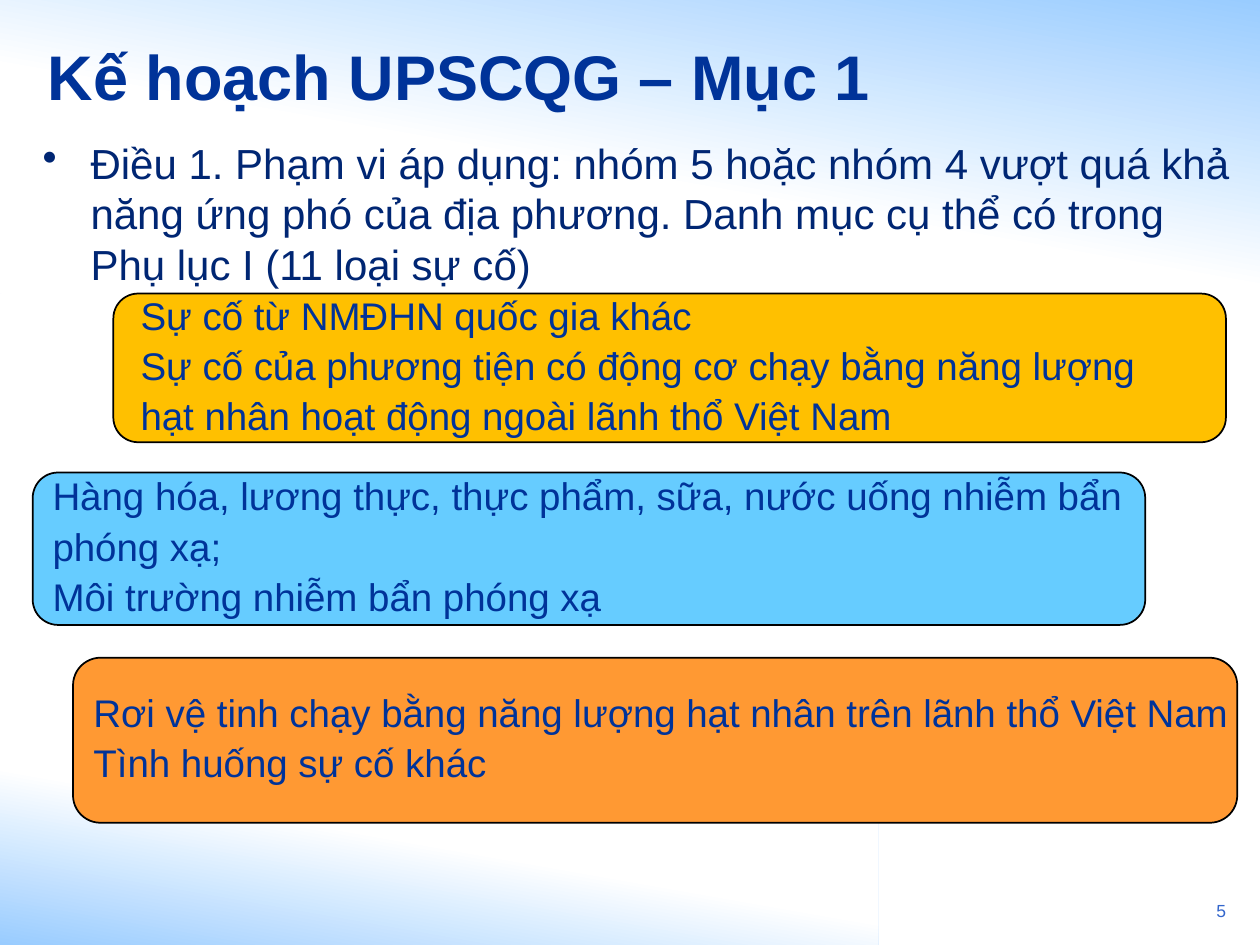
from lxml.etree import SubElement
from pptx import Presentation
from pptx.dml.color import RGBColor
from pptx.enum.shapes import MSO_SHAPE
from pptx.enum.text import MSO_ANCHOR, MSO_AUTO_SIZE, PP_ALIGN
from pptx.oxml.ns import qn
from pptx.util import Inches, Pt

WHITE = RGBColor(0xFF, 0xFF, 0xFF)
BLACK = RGBColor(0x00, 0x00, 0x00)
PALE_BLUE = RGBColor(0x99, 0xCC, 0xFF)
NAVY = RGBColor(0x00, 0x33, 0x99)
DARK_NAVY = RGBColor(0x00, 0x26, 0x73)
MID_BLUE = RGBColor(0x33, 0x66, 0xCC)
GOLD = RGBColor(0xFF, 0xC0, 0x00)
SKY = RGBColor(0x66, 0xCC, 0xFF)
ORANGE = RGBColor(0xFF, 0x99, 0x33)


def inches(box):
    return [Inches(length) for length in box]


def set_indent(paragraph, left, first=0):
    properties = paragraph._p.get_or_add_pPr()
    properties.set("marL", str(Inches(left)))
    properties.set("indent", str(Inches(first)))
    return properties


class SlideBuilder:
    font_name = "Arial"

    def __init__(self, slide):
        self.slide = slide
        self.shapes = slide.shapes

    def style(self, paragraph, size, color, bold=False):
        for run in paragraph.runs:
            run.font.name = self.font_name
            run.font.size = Pt(size)
            run.font.color.rgb = color
            run.font.bold = bold

    def gradient_band(self, box, white_at, angle):
        """Add a pale blue to white band behind the title."""
        band = self.shapes.add_shape(MSO_SHAPE.RECTANGLE, *inches(box))
        band.shadow.inherit = False
        band.line.fill.background()
        band.fill.gradient()
        band.fill.gradient_angle = angle
        stops = band.fill.gradient_stops
        for stop, color, position in zip(stops, (PALE_BLUE, WHITE), (0, white_at)):
            stop.color.rgb = color
            stop.position = position
        self.shapes.title.element.addprevious(band.element)

    def title(self, box, text):
        title = self.shapes.title
        title.left, title.top, title.width, title.height = inches(box)
        frame = title.text_frame
        frame.text = text
        frame.auto_size = MSO_AUTO_SIZE.NONE
        frame.vertical_anchor = MSO_ANCHOR.MIDDLE
        frame.paragraphs[0].alignment = PP_ALIGN.LEFT
        self.style(frame.paragraphs[0], 36, NAVY, bold=True)

    def text(self, box, text, size, color, align=PP_ALIGN.LEFT):
        frame = self.shapes.add_textbox(*inches(box)).text_frame
        frame.word_wrap = True
        paragraph = frame.paragraphs[0]
        paragraph.text = text
        paragraph.alignment = align
        self.style(paragraph, size, color)
        return paragraph

    def bullet(self, box, text):
        paragraph = self.text(box, text, 24, DARK_NAVY)
        properties = set_indent(paragraph, 0.38, -0.38)
        SubElement(properties, qn("a:buChar"), char="•")

    def card(self, box, fill, lines, indent=0, align=PP_ALIGN.LEFT):
        card = self.shapes.add_shape(MSO_SHAPE.ROUNDED_RECTANGLE, *inches(box))
        card.shadow.inherit = False
        card.fill.solid()
        card.fill.fore_color.rgb = fill
        card.line.color.rgb = BLACK
        card.line.width = Pt(1)
        frame = card.text_frame
        frame.text = "\n".join(lines)
        frame.word_wrap = True
        frame.margin_right = 0
        frame.vertical_anchor = MSO_ANCHOR.MIDDLE
        for number, paragraph in enumerate(frame.paragraphs):
            set_indent(paragraph, indent)
            paragraph.alignment = align
            paragraph.line_spacing = 0.9
            paragraph.space_before = Pt(5 if number else 0)
            self.style(paragraph, 22, NAVY)


def main():
    deck = Presentation()
    deck.slide_width, deck.slide_height = Inches(10), Inches(7.5)
    builder = SlideBuilder(deck.slides.add_slide(deck.slide_layouts[5]))

    builder.gradient_band((0, 5.8, 6.97, 1.7), 0.48, 80)
    builder.gradient_band((0, 0, 10, 2.33), 0.56, 260)
    builder.text((9.27, 7.09, 0.56, 0.32), "5", 10, MID_BLUE, PP_ALIGN.RIGHT)
    builder.title((0.28, 0.13, 7.4, 0.94), "Kế hoạch UPSCQG – Mục 1")
    builder.bullet(
        (0.24, 1.04, 9.75, 5.91),
        "Điều 1. Phạm vi áp dụng: nhóm 5 hoặc nhóm 4 vượt quá khả năng ứng phó "
        "của địa phương. Danh mục cụ thể có trong Phụ lục I (11 loại sự cố)",
    )
    builder.card((0.9, 2.33, 8.83, 1.18), GOLD, [
        "Sự cố từ NMĐHN quốc gia khác",
        "Sự cố của phương tiện có động cơ chạy bằng năng lượng ",
        "hạt nhân hoạt động ngoài lãnh thổ Việt Nam",
    ], indent=0.06, align=PP_ALIGN.JUSTIFY)
    builder.card((0.26, 3.75, 8.83, 1.21), SKY, [
        "Hàng hóa, lương thực, thực phẩm, sữa, nước uống nhiễm bẩn",
        "phóng xạ;",
        "Môi trường nhiễm bẩn phóng xạ",
    ])
    builder.card((0.58, 5.22, 9.24, 1.31), ORANGE, [
        "Rơi vệ tinh chạy bằng năng lượng hạt nhân trên lãnh thổ Việt Nam",
        "Tình huống sự cố khác",
    ])
    deck.save("out.pptx")


if __name__ == "__main__":
    main()
